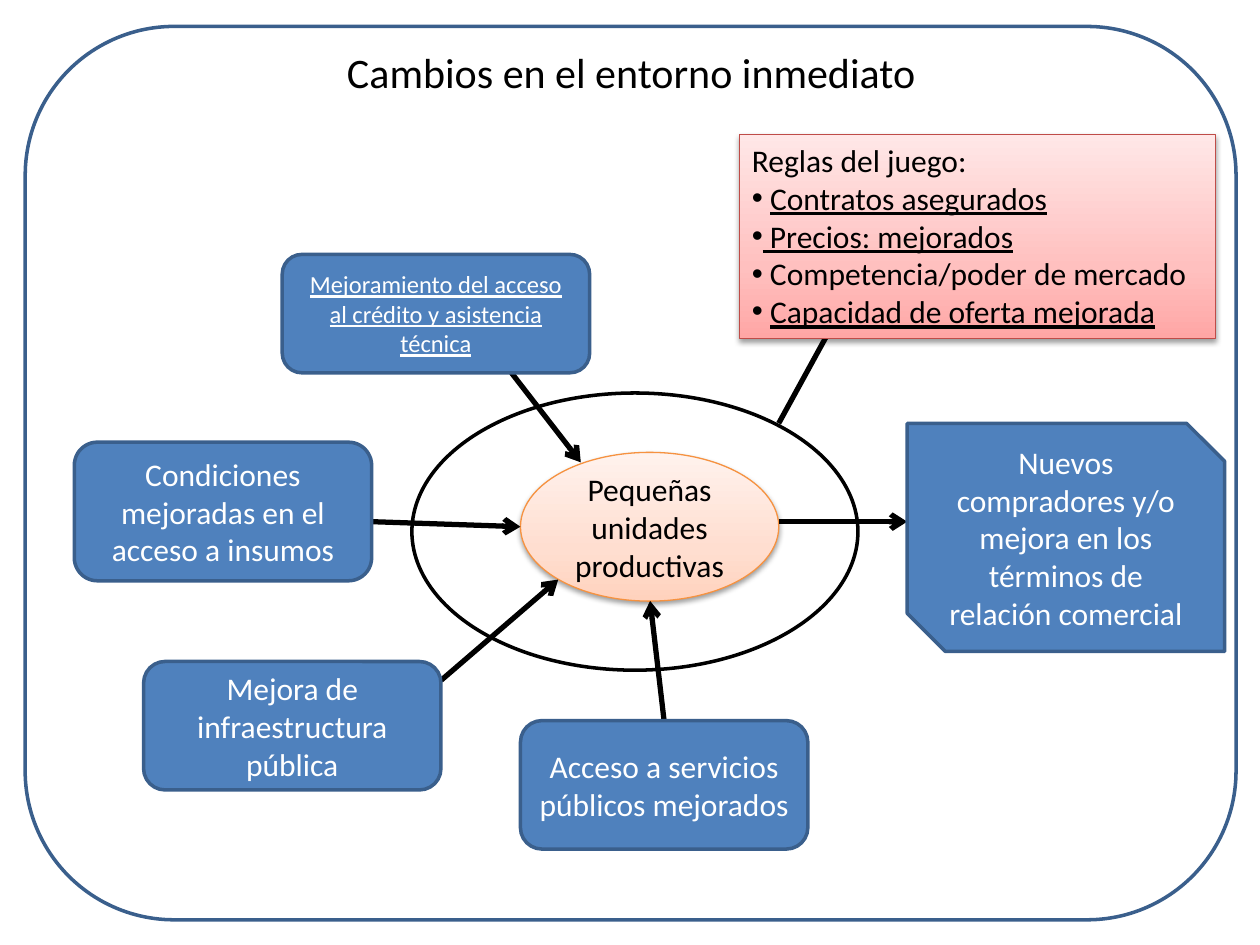
"""Build the slide on changes in the immediate environment of small producers."""
from lxml.etree import SubElement
from pptx import Presentation
from pptx.dml.color import RGBColor
from pptx.enum.shapes import MSO_CONNECTOR as Link, MSO_SHAPE as Kind
from pptx.enum.text import MSO_ANCHOR as Anchor, PP_ALIGN as Align
from pptx.oxml import parse_xml
from pptx.oxml.ns import nsdecls, qn
from pptx.util import Pt

COLORS = {"black": "000000", "white": "FFFFFF", "blue": "4F81BD", "navy": "3A5F8C",
          "orange": "F69240", "red": "BF4C48"}
GRADIENTS = {
    "peach": ((0, "FFD2BD"), (35, "FFDED0"), (100, "FFF2ED")),
    "rose": ((0, "FFA6A5"), (35, "FFC0BF"), (100, "FFE7E7")),
}
TITLE = "Cambios en el entorno inmediato"
CENTER = "Pequeñas unidades productivas"
FACTORS = [
    ("Mejoramiento del acceso al crédito y asistencia técnica", Kind.ROUNDED_RECTANGLE,
     (161.3, 145.4, 175.7, 67.7), {"size": Pt(14), "underline": True}),
    ("Condiciones mejoradas en el acceso a insumos", Kind.ROUNDED_RECTANGLE,
     (42.5, 252.7, 169.9, 79.2), {}),
    ("Mejora de infraestructura pública", Kind.ROUNDED_RECTANGLE,
     (82.1, 378, 169.9, 73.4), {}),
    ("Acceso a servicios públicos mejorados", Kind.ROUNDED_RECTANGLE,
     (297.4, 411.8, 164.2, 73.4), {}),
    ("Nuevos compradores y/o mejora en los términos de relación comercial",
     Kind.SNIP_2_DIAG_RECTANGLE, (518.4, 241.9, 181.4, 130.3), {}),
]
RULES_HEADING = "Reglas del juego:"
RULES = [
    [(" ", False), ("Contratos asegurados", True)],
    [(" Precios: mejorados", True)],
    [(" Competencia/poder de mercado", False)],
    [(" ", False), ("Capacidad de oferta mejorada", True)],
]
ARROWS = [
    (292.3, 213.1, 331.9, 264.2),
    (212.4, 298.1, 297.4, 301),
    (252, 388.8, 319, 331.2),
    (379.5, 411.8, 371.5, 343.4),
    (445, 298.1, 518.4, 298.1),
]
RULES_LINK = (445, 241.9, 473, 190.8)


def color(name):
    return RGBColor.from_string(COLORS[name])


def write(paragraph, text, tone="black", **changes):
    run = paragraph.add_run()
    run.text = text
    style = {"name": "Calibri", "size": Pt(18), **changes}
    for key, value in style.items():
        setattr(run.font, key, value)
    run.font.color.rgb = color(tone)


def write_centered(shape, text, tone="black", **changes):
    frame = shape.text_frame
    frame.word_wrap = True
    frame.vertical_anchor = Anchor.MIDDLE
    frame.paragraphs[0].alignment = Align.CENTER
    write(frame.paragraphs[0], text, tone, **changes)


def add_block(slide, kind, box, edge, width=2, fill=None):
    block = slide.shapes.add_shape(kind, *map(Pt, box))
    block.shadow.inherit = False
    block.line.color.rgb = color(edge)
    block.line.width = Pt(width)
    if fill in COLORS:
        block.fill.solid()
        block.fill.fore_color.rgb = color(fill)
    else:
        block.fill.background()
    if fill in GRADIENTS:
        add_glow(block, GRADIENTS[fill])
    return block


def add_glow(block, stops):
    properties = block.element.spPr
    stop_xml = "".join(f'<a:gs pos="{at * 1000}"><a:srgbClr val="{tone}"/></a:gs>'
                       for at, tone in stops)
    gradient = parse_xml(f'<a:gradFill {nsdecls("a")} rotWithShape="1"><a:gsLst>{stop_xml}</a:gsLst>'
                         '<a:lin ang="16200000" scaled="0"/></a:gradFill>')
    properties.replace(properties.find(qn("a:noFill")), gradient)
    properties.find(qn("a:effectLst")).append(parse_xml(
        f'<a:outerShdw {nsdecls("a")} blurRad="{Pt(3.1)}" dist="{Pt(1.6)}" dir="5400000" '
        'rotWithShape="0"><a:srgbClr val="000000"><a:alpha val="38000"/></a:srgbClr></a:outerShdw>'))


def add_line(slide, ends, arrow=True):
    line = slide.shapes.add_connector(Link.STRAIGHT, *map(Pt, ends))
    line.line.color.rgb = color("black")
    line.line.width = Pt(3)
    if arrow:
        SubElement(line.line._get_or_add_ln(), qn("a:tailEnd"), type="arrow")
    SubElement(line._element.spPr, qn("a:effectLst"))
    return line


def add_rules(slide):
    panel = add_block(slide, Kind.RECTANGLE, (422.6, 77, 272.2, 116.6), "red", 0.75, "rose")
    frame = panel.text_frame
    frame.word_wrap = True
    frame.vertical_anchor = Anchor.TOP
    heading = frame.paragraphs[0]
    heading.alignment = Align.LEFT
    write(heading, RULES_HEADING)
    for rule in RULES:
        item = frame.add_paragraph()
        item.alignment = Align.LEFT
        bullet = item._p.get_or_add_pPr()
        SubElement(bullet, qn("a:buFont"), typeface="Arial")
        SubElement(bullet, qn("a:buChar"), char="•")
        for text, underlined in rule:
            write(item, text, underline=underlined)


def main():
    deck = Presentation()
    deck.slide_width, deck.slide_height = Pt(720), Pt(540)
    slide = deck.slides.add_slide(deck.slide_layouts[6])

    title = slide.shapes.add_textbox(*map(Pt, (36.7, 20.9, 648, 39.6)))
    write_centered(title, TITLE, size=Pt(24))
    center = add_block(slide, Kind.OVAL, (297.4, 258.5, 147.6, 85), "orange", 0.75, "peach")
    write_centered(center, CENTER)

    arrows = [add_line(slide, ends) for ends in ARROWS]
    factors = []
    for text, kind, box, changes in FACTORS:
        factor = add_block(slide, kind, box, "navy", fill="blue")
        write_centered(factor, text, "white", **changes)
        factors.append(factor)
    arrows[3].begin_connect(factors[3], 0)

    add_block(slide, Kind.OVAL, (235.4, 224.6, 254.9, 158.4), "black")
    add_line(slide, RULES_LINK, arrow=False)
    add_rules(slide)
    add_block(slide, Kind.ROUNDED_RECTANGLE, (14.4, 15.1, 691.9, 510.5), "navy")
    deck.save("out.pptx")


if __name__ == "__main__":
    main()
